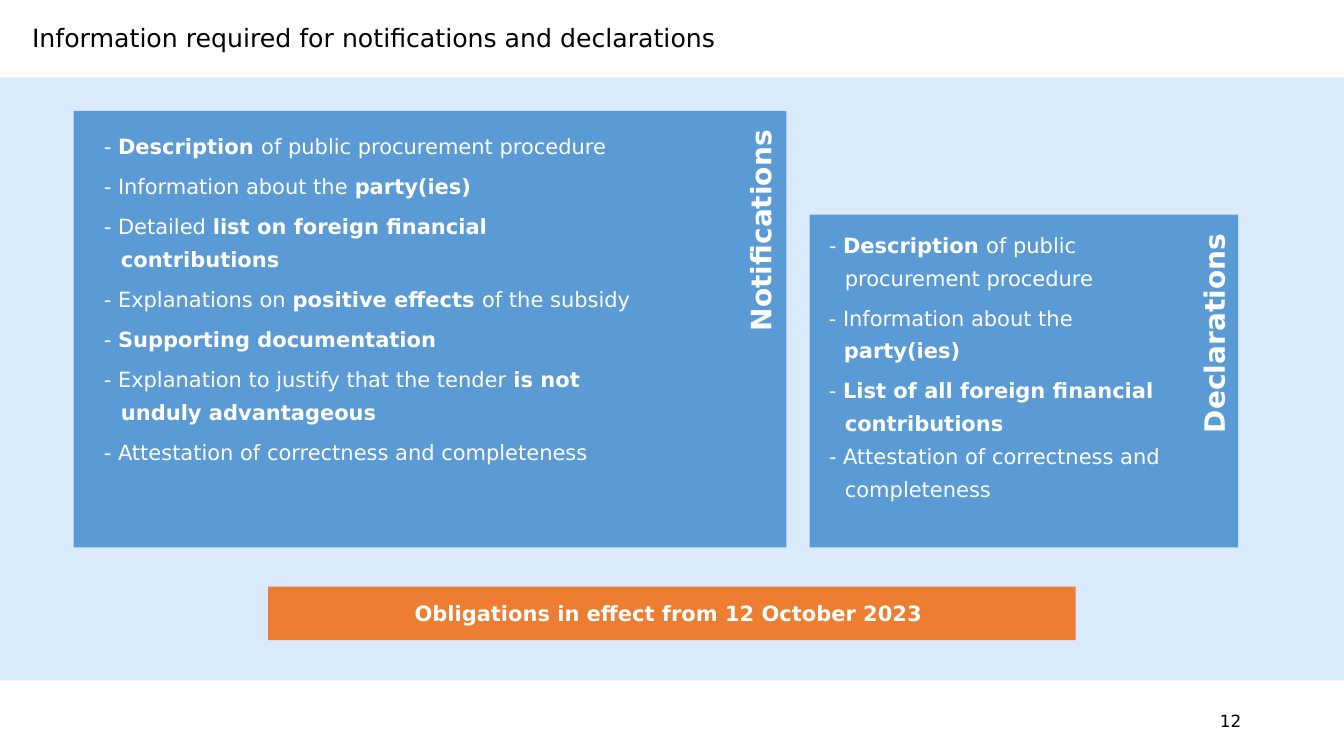
"""Build the slide on information required for notifications and declarations."""
from dataclasses import dataclass

from pptx import Presentation
from pptx.dml.color import RGBColor
from pptx.enum import shapes, text
from pptx.util import Inches, Pt


@dataclass(frozen=True)
class Theme:
    """Colours, font and type sizes in points."""
    font: str = "DejaVu Sans"
    black: str = "000000"
    white: str = "FFFFFF"
    band: str = "D9EAFB"
    panel: str = "5B9BD5"
    banner: str = "ED7D31"
    title_size: int = 18
    label_size: int = 20
    body_size: int = 15
    number_size: int = 12
    item_gap: float = 5.25


@dataclass(frozen=True)
class Box:
    """Place and size in inches."""
    left: float
    top: float
    width: float
    height: float

    def lengths(self) -> tuple:
        """Return the four lengths for a shape call."""
        return tuple(map(Inches, (self.left, self.top, self.width, self.height)))

    def turned(self) -> "Box":
        """Return the box that covers this one after a quarter turn."""
        shift = (self.width - self.height) / 2
        return Box(self.left + shift, self.top - shift, self.height, self.width)

    def label_strip(self) -> "Box":
        """Return the strip for a label in the top right corner."""
        width, height = 0.46, 2.4
        return Box(self.left + self.width - width, self.top, width, height)


@dataclass(frozen=True)
class Item:
    """One list entry, with bold parts between double asterisks."""
    wording: str
    hanging: float = 0
    gap_after: bool = True


@dataclass(frozen=True)
class Panel:
    """A blue panel with a vertical label and a list."""
    label: str
    label_inset: float
    box: Box
    list_box: Box
    items: tuple[Item, ...]


THEME = Theme()
PANELS = (
    Panel("Notifications", 0.09, Box(0.73, 1.1, 7.07, 4.33), Box(0.96, 1.18, 5.53, 4.16), (
        Item("- **Description **of public procurement procedure"),
        Item("- Information about the **party(ies)**"),
        Item("- Detailed **list on foreign financial contributions**", 0.17),
        Item("- Explanations on **positive effects **of the subsidy"),
        Item("- **Supporting documentation**"),
        Item("- Explanation to justify that the tender **is not unduly advantageous**", 0.17),
        Item("- Attestation of correctness and completeness"),
    )),
    Panel("Declarations", 0.07, Box(8.03, 2.13, 4.25, 3.3), Box(8.15, 2.16, 3.48, 3.92), (
        Item("- **Description **of public procurement procedure", 0.16),
        Item("- Information about the **party(ies)**", 0.15),
        Item("- **List of all foreign financial contributions**", 0.16, False),
        Item("- Attestation of correctness and completeness", 0.16, False),
    )),
)


def style_run(run, size: float, color: str, bold: bool = False) -> None:
    """Set the font of a run."""
    run.font.name = THEME.font
    run.font.size = Pt(size)
    run.font.bold = bold
    run.font.color.rgb = RGBColor.from_string(color)


def write_line(shape, wording: str, size: float, color: str, align, bold: bool = False):
    """Write a single styled paragraph and return it."""
    paragraph = shape.text_frame.paragraphs[0]
    paragraph.text = wording
    paragraph.alignment = align
    style_run(paragraph.runs[0], size, color, bold)
    return paragraph


def add_rectangle(slide, box: Box, color: str):
    """Add a plain filled rectangle."""
    shape = slide.shapes.add_shape(shapes.MSO_SHAPE.RECTANGLE, *box.lengths())
    shape.shadow.inherit = False
    shape.fill.solid()
    shape.fill.fore_color.rgb = RGBColor.from_string(color)
    shape.line.fill.background()
    return shape


def add_text_box(slide, box: Box, anchor=text.MSO_ANCHOR.TOP):
    """Add a wrapping text box."""
    shape = slide.shapes.add_textbox(*box.lengths())
    shape.text_frame.word_wrap = True
    shape.text_frame.vertical_anchor = anchor
    return shape


def add_list(slide, box: Box, items: tuple[Item, ...]) -> None:
    """Add the list of a panel."""
    frame = add_text_box(slide, box).text_frame
    frame.margin_left = frame.margin_right = Inches(0.07)
    frame.margin_top = frame.margin_bottom = Inches(0.07)
    for index, item in enumerate(items):
        paragraph = frame.add_paragraph() if index else frame.paragraphs[0]
        paragraph.line_spacing = 1.3
        paragraph.space_after = Pt(THEME.item_gap if item.gap_after else 0)
        if item.hanging:
            properties = paragraph._p.get_or_add_pPr()
            properties.set("marL", str(Inches(item.hanging)))
            properties.set("indent", str(-Inches(item.hanging)))
        for position, part in enumerate(item.wording.split("**")):
            if part:
                run = paragraph.add_run()
                run.text = part
                style_run(run, THEME.body_size, THEME.white, position % 2 == 1)


def add_panel(slide, panel: Panel) -> None:
    """Add a panel with its list and a label that reads upwards."""
    add_rectangle(slide, panel.box, THEME.panel)
    strip = add_text_box(slide, panel.box.label_strip().turned(), text.MSO_ANCHOR.BOTTOM)
    strip.rotation = 270
    strip.text_frame.margin_right = Inches(0.19)
    strip.text_frame.margin_bottom = Inches(panel.label_inset)
    label = write_line(strip, panel.label, THEME.label_size, THEME.white,
                       text.PP_ALIGN.RIGHT, True)
    label.line_spacing = 0.9
    add_list(slide, panel.list_box, panel.items)


def main() -> None:
    """Build and save the presentation."""
    presentation = Presentation()
    presentation.slide_width = Inches(13.33)
    presentation.slide_height = Inches(7.5)
    slide = presentation.slides.add_slide(presentation.slide_layouts[6])

    add_rectangle(slide, Box(0, 0.77, 13.33, 5.98), THEME.band)
    title = write_line(add_text_box(slide, Box(0.22, 0.21, 12.2, 0.44)),
                       "Information required for notifications and declarations",
                       THEME.title_size, THEME.black, text.PP_ALIGN.LEFT)
    title.line_spacing = 0.9
    write_line(add_text_box(slide, Box(9.41, 6.95, 3, 0.4), text.MSO_ANCHOR.MIDDLE),
               "12", THEME.number_size, THEME.black, text.PP_ALIGN.RIGHT)
    banner = add_rectangle(slide, Box(2.66, 5.82, 8.01, 0.53), THEME.banner)
    banner.text_frame.vertical_anchor = text.MSO_ANCHOR.MIDDLE
    write_line(banner, "Obligations in effect from 12 October 2023 ",
               THEME.body_size, THEME.white, text.PP_ALIGN.CENTER, True)
    for panel in PANELS:
        add_panel(slide, panel)

    presentation.save("out.pptx")


if __name__ == "__main__":
    main()
